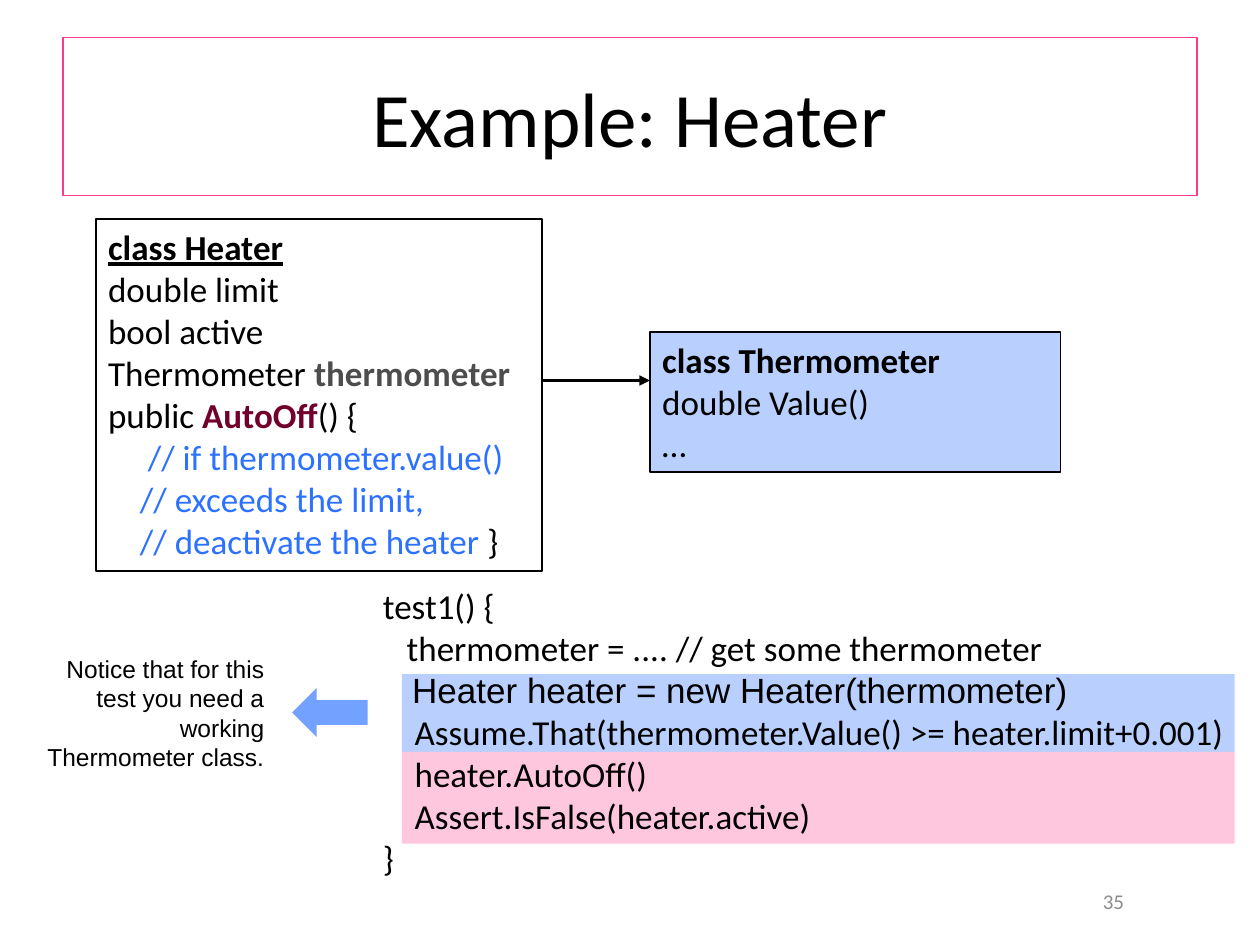
from lxml.etree import SubElement
from pptx import Presentation
from pptx.dml.color import RGBColor
from pptx.enum.shapes import MSO_CONNECTOR, MSO_SHAPE
from pptx.enum.text import MSO_ANCHOR as Anchor, PP_ALIGN as Align
from pptx.oxml.ns import qn
from pptx.util import Cm, Pt

# Content: each line is (indent in cm, [(text, style), ...])
BLACK, BLUE, PINK = "000000", "B9D0FF", "FFC7DD"
COMMENT = {"color": "2C71FF"}
BOLD = {"bold": True}

TITLE = "Example: Heater"
HEATER = [
    (0, [("class Heater", {"bold": True, "underline": True})]),
    (0, [("double limit", {})]),
    (0, [("bool active", {})]),
    (0, [("Thermometer ", {}), ("thermometer", {"bold": True, "color": "4D4D4D"})]),
    (0, [("public ", {}), ("AutoOff", {"bold": True, "color": "72002C"}), ("() {", {})]),
    (0.8, [("// if thermometer.value()", COMMENT)]),
    (0.64, [("// exceeds the limit,", COMMENT)]),
    (0.64, [("// deactivate the heater ", COMMENT), ("}", {})]),
]
THERMOMETER = [
    (0, [("class Thermometer", BOLD)]),
    (0, [("double Value()", {})]),
    (0, [("…", {})]),
]
TEST = [
    (0, [("test1() {", {})]),
    (0.48, [("thermometer = .... // get some thermometer", {})]),
    (0.59, [("Heater heater = new Heater(thermometer)", {"font": "Arial"})]),
    (0.64, [("Assume.That(thermometer.Value() >= heater.limit+0.001)", {})]),
    (0.64, [("heater.AutoOff()", {})]),
    (0.64, [("Assert.IsFalse(heater.active)", {})]),
    (0, [("}", {})]),
]
NOTE = [(0, [("Notice that for this test you need a working Thermometer class.", {})])]
NUMBER = [(0, [("35", {})])]

# Places: left, top, width, height in cm
BANDS = [((8.1, 13.59, 16.79, 1.57), BLUE), ((8.1, 15.16, 16.79, 1.85), PINK)]
TITLE_AT = (1.27, 0.76, 22.86, 3.18)
HEATER_AT = (1.93, 4.42, 9, 7.09)
THERMOMETER_AT = (13.1, 6.7, 8.28, 2.82)
TEST_AT = (7.47, 11.66, 17.63, 6.25)
NOTE_AT = (0.3, 13.06, 5.28, 2.64)
NUMBER_AT = (16.99, 17.65, 5.92, 1.02)
ARROW_AT = (5.89, 13.87, 1.52, 0.99)


def rgb(value):
    return RGBColor.from_string(value)


def lengths(place):
    return [Cm(value) for value in place]


def add_block(place, fill=None, line=None, kind=MSO_SHAPE.RECTANGLE):
    block = page.shapes.add_shape(kind, *lengths(place))
    block.shadow.inherit = False
    if fill:
        block.fill.solid()
        block.fill.fore_color.rgb = rgb(fill)
    else:
        block.fill.background()
    if line:
        block.line.color.rgb = rgb(line)
        block.line.width = Pt(1)
    else:
        block.line.fill.background()
    return block


def write(box, lines, size=20, font="Calibri", color=BLACK, align=Align.LEFT,
          anchor=Anchor.TOP, wrap=True):
    frame = box.text_frame
    frame.word_wrap = wrap
    frame.vertical_anchor = anchor
    for index, (indent, spans) in enumerate(lines):
        para = frame.add_paragraph() if index else frame.paragraphs[0]
        para.alignment = align
        para.font.size = Pt(size)
        if indent:
            para._p.get_or_add_pPr().set("marL", str(Cm(indent)))
        for text, style in spans:
            span = para.add_run()
            span.text = text
            span.font.name = style.get("font", font)
            span.font.size = Pt(size)
            span.font.color.rgb = rgb(style.get("color", color))
            span.font.bold = style.get("bold", False)
            span.font.underline = style.get("underline", False)


def add_text(place, lines, **options):
    write(page.shapes.add_textbox(*lengths(place)), lines, **options)


deck = Presentation()
deck.slide_width, deck.slide_height = Cm(25.4), Cm(19.05)
page = deck.slides.add_slide(deck.slide_layouts[5])

# Title
title = page.shapes.title
title.left, title.top, title.width, title.height = lengths(TITLE_AT)
title.line.color.rgb = rgb("FF388C")
title.line.width = Pt(0.75)
write(title, [(0, [(TITLE, {})])], size=44, align=Align.CENTER, anchor=Anchor.MIDDLE)

# Test code on its coloured bands
for place, fill in BANDS:
    add_block(place, fill)
add_text(TEST_AT, TEST, wrap=False)

# Class boxes
write(add_block(THERMOMETER_AT, BLUE, BLACK), THERMOMETER)
write(add_block(HEATER_AT, line=BLACK), HEATER)

# Arrow from Heater to Thermometer
start, level = HEATER_AT[0] + HEATER_AT[2], 7.67
link = page.shapes.add_connector(
    MSO_CONNECTOR.STRAIGHT, *lengths((start, level, THERMOMETER_AT[0], level)))
link.line.color.rgb = rgb(BLACK)
link.line.width = Pt(1.5)
SubElement(link.line._get_or_add_ln(), qn("a:tailEnd"), type="triangle")
SubElement(link._element.spPr, qn("a:effectLst"))

# Side note and page number
add_text(NOTE_AT, NOTE, size=14, font="Arial", align=Align.RIGHT)
add_block(ARROW_AT, "72A1FF", kind=MSO_SHAPE.LEFT_ARROW)
add_text(NUMBER_AT, NUMBER, size=12, color="8C8C8C", align=Align.RIGHT,
         anchor=Anchor.MIDDLE)

deck.save("out.pptx")
